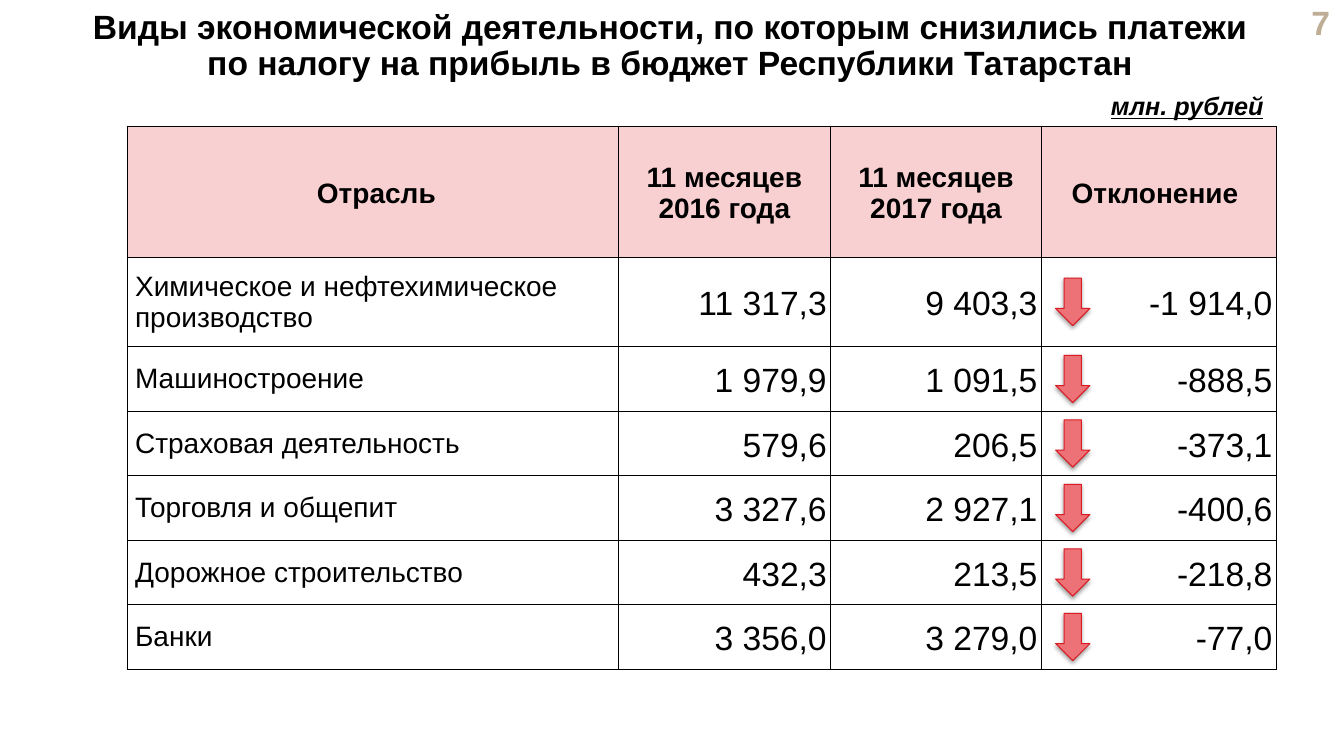
from lxml import etree
from pptx import Presentation
from pptx.dml.color import RGBColor
from pptx.enum.shapes import MSO_SHAPE
from pptx.enum.text import MSO_ANCHOR, PP_ALIGN
from pptx.oxml.ns import qn
from pptx.util import Inches, Pt

LEFT, CENTER, RIGHT = PP_ALIGN.LEFT, PP_ALIGN.CENTER, PP_ALIGN.RIGHT
TOP, MIDDLE = MSO_ANCHOR.TOP, MSO_ANCHOR.MIDDLE
DOWN_ARROW = MSO_SHAPE.DOWN_ARROW

COLORS = {
    "text": "000000",
    "number": "BFAE96",
    "header": "F9D0D2",
    "arrow": "ED7277",
    "arrow_line": "DA1B23",
}
FONT = "Arial"
TITLE = ("Виды экономической деятельности, по которым снизились платежи "
         "по налогу на прибыль в бюджет Республики Татарстан")
ROWS = [
    (" Отрасль", "11 месяцев 2016 года", "11 месяцев 2017 года", "Отклонение "),
    ("Химическое и нефтехимическое производство", "11 317,3", "9 403,3", "-1 914,0"),
    ("Машиностроение", "1 979,9", "1 091,5", "-888,5"),
    ("Страховая деятельность", "579,6", "206,5", "-373,1"),
    ("Торговля и общепит", "3 327,6", "2 927,1", "-400,6"),
    ("Дорожное строительство", "432,3", "213,5", "-218,8"),
    ("Банки", "3 356,0", "3 279,0", "-77,0"),
]
TABLE_LEFT, TABLE_TOP = 1.26, 1.25
COLUMN_WIDTHS = [4.87, 2.11, 2.09, 2.33]
ROW_HEIGHTS = [1.3, 0.89] + [0.64] * 5
ARROW_LEFT, ARROW_WIDTH, ARROW_HEIGHT = 10.47, 0.34, 0.47


def color(name):
    return RGBColor.from_string(COLORS[name])


def style(para, size, align, bold=False, color_name="text"):
    para.alignment = align
    para.font.name = FONT
    para.font.size = Pt(size)
    para.font.bold = bold
    para.font.color.rgb = color(color_name)


def add_text(page, text, area, size, align, anchor=TOP, wrap=True, color_name="text"):
    box = page.shapes.add_textbox(*map(Inches, area))
    box.text_frame.word_wrap = wrap
    box.text_frame.vertical_anchor = anchor
    para = box.text_frame.paragraphs[0]
    para.text = text
    style(para, size, align, True, color_name)
    return para


def add_borders(cell):
    properties = cell._tc.get_or_add_tcPr()
    for position, side in enumerate(("a:lnL", "a:lnR", "a:lnT", "a:lnB")):
        line = etree.Element(qn(side), w=str(Pt(0.5)))
        fill = etree.SubElement(line, qn("a:solidFill"))
        etree.SubElement(fill, qn("a:srgbClr"), val=COLORS["text"])
        properties.insert(position, line)


def fill_cell(cell, text, row, column):
    header, label = row == 0, row > 0 and column == 0
    cell.text = text
    cell.vertical_anchor = MIDDLE
    cell.margin_left = cell.margin_right = Inches(0.08 if label else 0.04)
    cell.margin_top = Inches(0 if label else 0.04)
    cell.margin_bottom = Inches(0)
    align = CENTER if header else LEFT if label else RIGHT
    style(cell.text_frame.paragraphs[0], 20 if header or label else 24, align, header)
    if header:
        cell.fill.solid()
        cell.fill.fore_color.rgb = color("header")
    else:
        cell.fill.background()
    add_borders(cell)


def add_tax_table(page):
    area = (TABLE_LEFT, TABLE_TOP, sum(COLUMN_WIDTHS), sum(ROW_HEIGHTS))
    frame = page.shapes.add_table(len(ROWS), len(COLUMN_WIDTHS), *map(Inches, area))
    table = frame.table
    table.horz_banding = False
    for column, width in zip(table.columns, COLUMN_WIDTHS):
        column.width = Inches(width)
    for row, height in zip(table.rows, ROW_HEIGHTS):
        row.height = Inches(height)
    for row, texts in enumerate(ROWS):
        for column, text in enumerate(texts):
            fill_cell(table.cell(row, column), text, row, column)


def add_shadow(shape):
    shape.shadow.inherit = False
    effects = shape._element.spPr.find(qn("a:effectLst"))
    shadow = etree.SubElement(effects, qn("a:outerShdw"), blurRad=str(Pt(3.1)),
                              dist=str(Pt(1.6)), dir="5400000", rotWithShape="0")
    tint = etree.SubElement(shadow, qn("a:srgbClr"), val=COLORS["text"])
    etree.SubElement(tint, qn("a:alpha"), val="38000")


def add_decline_arrow(page, middle):
    area = (ARROW_LEFT, middle - ARROW_HEIGHT / 2, ARROW_WIDTH, ARROW_HEIGHT)
    arrow = page.shapes.add_shape(DOWN_ARROW, *map(Inches, area))
    arrow.fill.solid()
    arrow.fill.fore_color.rgb = color("arrow")
    arrow.line.color.rgb = color("arrow_line")
    arrow.line.width = Pt(0.75)
    add_shadow(arrow)


def main():
    deck = Presentation()
    deck.slide_width, deck.slide_height = Inches(13.33), Inches(7.5)
    page = deck.slides.add_slide(deck.slide_layouts[6])
    add_text(page, "7", (12.44, 0.05, 0.85, 0.34), 24, RIGHT, MIDDLE, color_name="number")
    title = add_text(page, TITLE, (0.75, 0.05, 11.79, 1.33), 24, CENTER)
    title.line_spacing = 0.9
    add_tax_table(page)
    unit = add_text(page, "млн. рублей", (10.92, 0.85, 1.73, 0.4), 18, LEFT, wrap=False)
    unit.font.italic = True
    unit.font.underline = True
    for row in range(1, len(ROWS)):
        add_decline_arrow(page, TABLE_TOP + sum(ROW_HEIGHTS[:row]) + ROW_HEIGHTS[row] / 2)
    deck.save("out.pptx")


if __name__ == "__main__":
    main()
